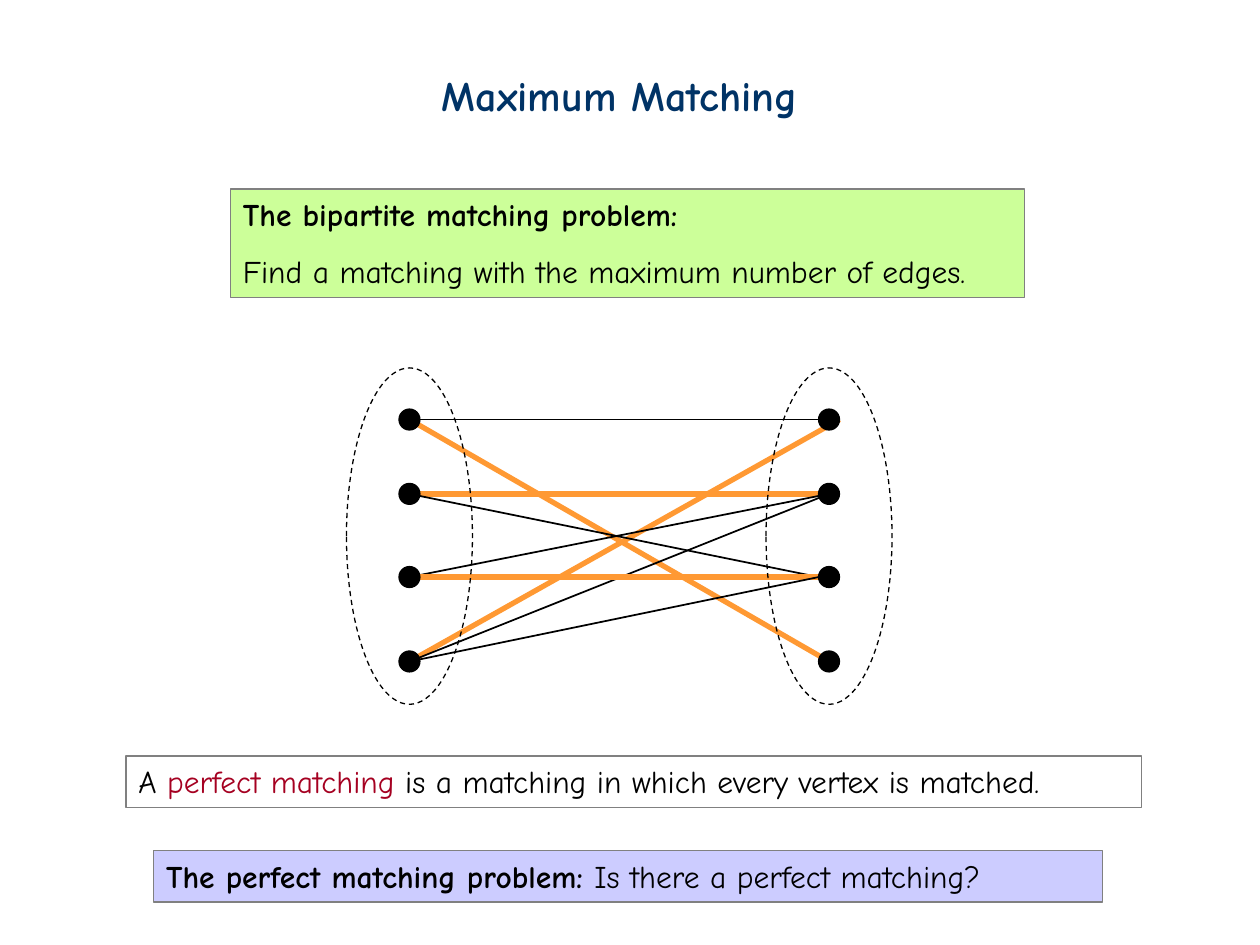
from lxml import etree
from pptx import Presentation
from pptx import util as u
from pptx.dml.color import RGBColor
from pptx.enum import dml, shapes, text
from pptx.oxml.ns import qn

FONT = "Comic Neue"
BLACK, GRAY, NAVY, RED, ORANGE = "000000", "808080", "003366", "A50021", "FF9933"

# Content: box, fill, line, size, paragraphs of (text, bold, colour) runs
BOXES = [
    ((3.41, 0.5, 3.26, 0.5), None, None, 24, [[("Maximum Matching", True, NAVY)]]),
    ((1.83, 1.5, 6.3, 0.86), "CCFF99", GRAY, 18, [
        [("The bipartite matching problem:", True, BLACK)],
        [("Find a matching with the maximum number of edges.", False, BLACK)]]),
    ((1, 6, 8.06, 0.41), None, GRAY, 18, [
        [("A ", False, BLACK), ("perfect matching", False, RED),
         (" is a matching in which every vertex is matched.", False, BLACK)]]),
    ((1.22, 6.75, 7.53, 0.41), "CCCCFF", GRAY, 18, [
        [("The perfect matching problem: ", True, BLACK),
         ("Is there a perfect matching?", False, BLACK)]]),
]

# Graph: vertex columns and rows; edges as (left row, right row, matched, end)
# where end shifts the right end by that many vertex radii
COLS = (3.25, 6.58)
ROWS = (3.33, 3.92, 4.58, 5.25)
RADIUS = 0.083
SET_TOP, SET_W, SET_H = 2.92, 1, 2.67
EDGES = [
    (0, 0, False, 1), (0, 3, True, 0), (3, 0, True, 1), (1, 1, True, 0),
    (2, 1, False, 0), (3, 1, False, 0), (1, 2, False, -1), (2, 2, True, -1),
    (3, 2, False, -1),
]

prs = Presentation()
prs.slide_width, prs.slide_height = u.Inches(10), u.Inches(7.5)
slide = prs.slides.add_slide(prs.slide_layouts[6])


def rgb(value):
    return RGBColor.from_string(value)


def add_shape(kind, box, fill, line, dashed=False):
    sp = slide.shapes.add_shape(kind, *map(u.Inches, box))
    sp.shadow.inherit = False
    if fill:
        sp.fill.solid()
        sp.fill.fore_color.rgb = rgb(fill)
    else:
        sp.fill.background()
    if line:
        sp.line.color.rgb = rgb(line)
        sp.line.width = u.Pt(0.75)
    else:
        sp.line.fill.background()
    if dashed:
        sp.line.dash_style = dml.MSO_LINE.DASH
    return sp


def add_text(box, fill, line, size, paragraphs):
    tf = add_shape(shapes.MSO_SHAPE.RECTANGLE, box, fill, line).text_frame
    tf.word_wrap = True
    tf.vertical_anchor = text.MSO_ANCHOR.TOP
    for i, runs in enumerate(paragraphs):
        p = tf.add_paragraph() if i else tf.paragraphs[0]
        p.alignment = text.PP_ALIGN.LEFT
        if i:
            p.line_spacing = 1.5
        for words, bold, color in runs:
            r = p.add_run()
            r.text = words
            r.font.name, r.font.size, r.font.bold = FONT, u.Pt(size), bold
            r.font.color.rgb = rgb(color)


def add_edge(left, right, matched, end):
    ends = COLS[0], ROWS[left], COLS[1] + end * RADIUS, ROWS[right]
    c = slide.shapes.add_connector(shapes.MSO_CONNECTOR.STRAIGHT, *map(u.Inches, ends))
    c.line.color.rgb = rgb(ORANGE if matched else BLACK)
    c.line.width = u.Pt(3 if matched else 1)
    etree.SubElement(c._element.spPr, qn("a:effectLst"))


# Title and statements
for box in BOXES:
    add_text(*box)

# Edges, then vertices and the two vertex sets over them
for edge in EDGES:
    add_edge(*edge)
for x in COLS:
    for y in ROWS:
        add_shape(shapes.MSO_SHAPE.OVAL,
                  (x - RADIUS, y - RADIUS, 2 * RADIUS, 2 * RADIUS), BLACK, BLACK)
    add_shape(shapes.MSO_SHAPE.OVAL, (x - SET_W / 2, SET_TOP, SET_W, SET_H),
              None, BLACK, dashed=True)

prs.save("out.pptx")
